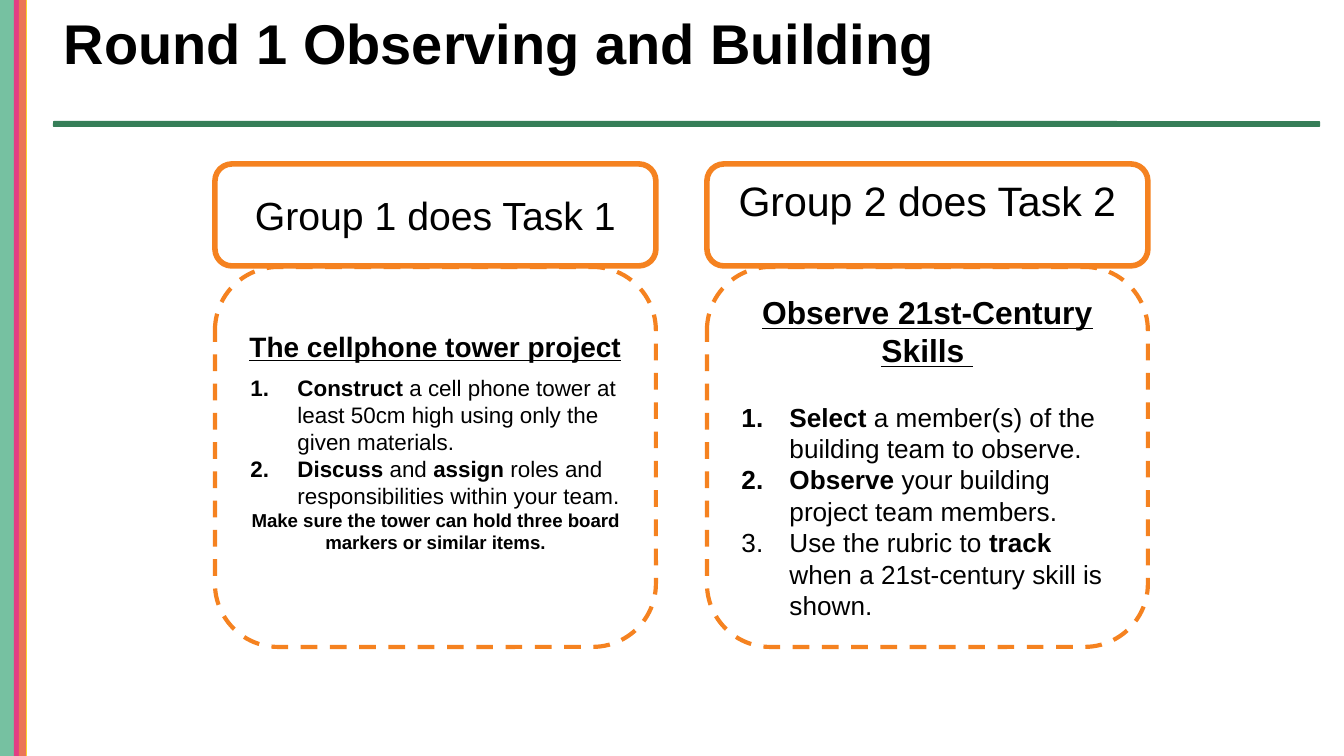
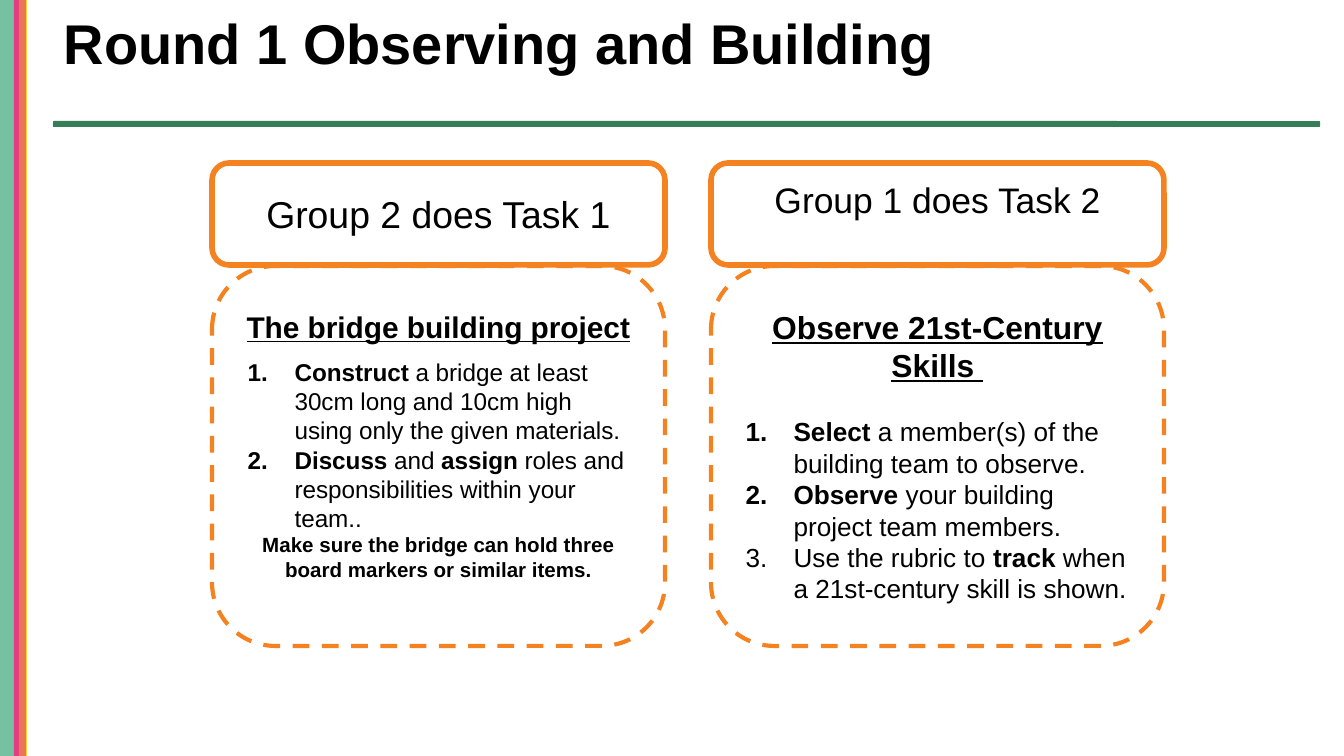
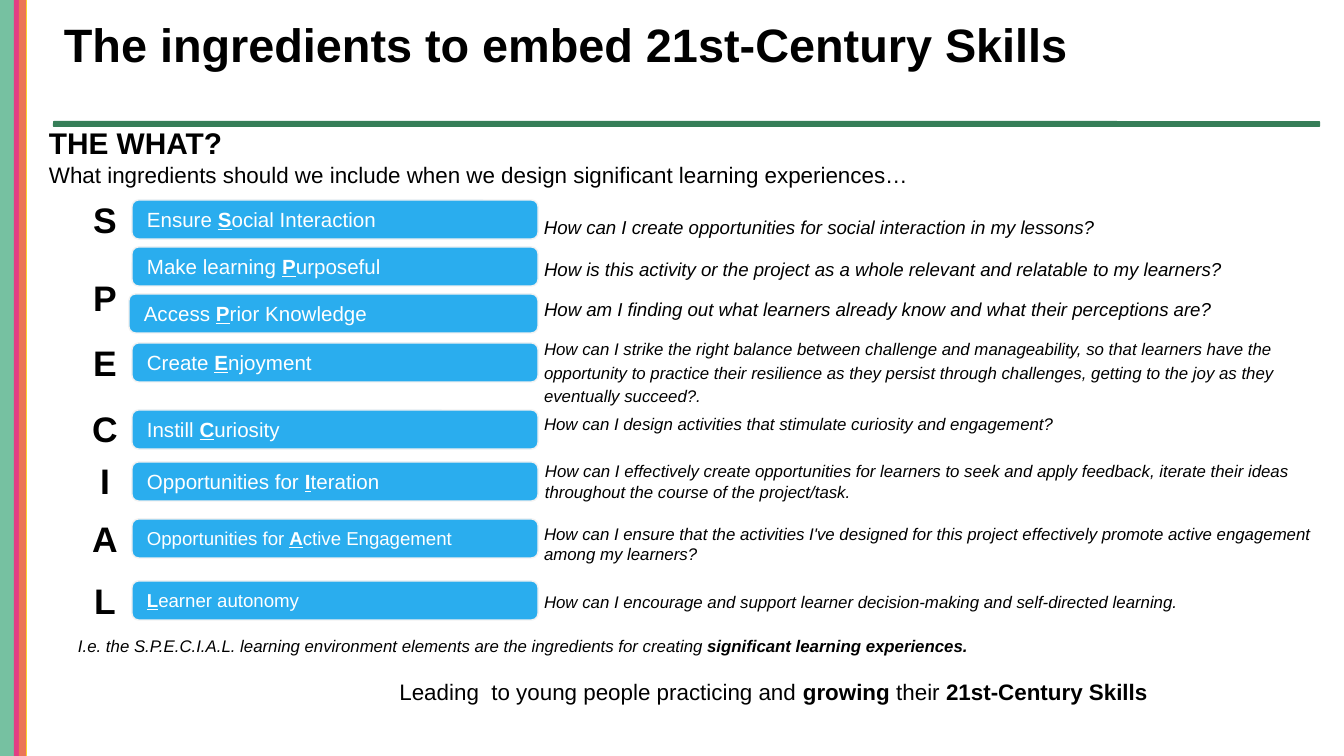
from lxml.etree import SubElement
from pptx import Presentation
from pptx.dml.color import RGBColor
from pptx.enum.dml import MSO_LINE
from pptx.enum.shapes import MSO_SHAPE
from pptx.enum.text import MSO_ANCHOR, PP_ALIGN
from pptx.oxml.ns import qn
from pptx.util import Pt

PX = 914400 / 134.4
WIDE, HIGH = 1344, 756
FONT = "Arial"
BLACK = RGBColor(0x00, 0x00, 0x00)
WHITE = RGBColor(0xFF, 0xFF, 0xFF)
PALE = RGBColor(0xF2, 0xF2, 0xF2)
YELLOW = RGBColor(0xF9, 0xD3, 0x2E)
GREEN = RGBColor(0x36, 0x7E, 0x58)
MINT = RGBColor(0x76, 0xC1, 0xA1)
PINK = RGBColor(0xE2, 0x3E, 0x84)
CORAL = RGBColor(0xEB, 0x75, 0x56)
ORANGE = RGBColor(0xF5, 0x82, 0x20)
BLUE = RGBColor(0x2A, 0xAD, 0xEE)
RECT, ROUND = MSO_SHAPE.RECTANGLE, MSO_SHAPE.ROUNDED_RECTANGLE
LEFT, MID = PP_ALIGN.LEFT, PP_ALIGN.CENTER


def place(slide, form, spot, fill=None, edge=None, thick=0.75, pad=(13, 13, 13, 13)):
    area = [round(n * PX) for n in spot]
    if form is None:
        item = slide.shapes.add_textbox(*area)
    else:
        item = slide.shapes.add_shape(form, *area)
        item.shadow.inherit = False
        if fill is None:
            item.fill.background()
        else:
            item.fill.solid()
            item.fill.fore_color.rgb = fill
        if edge is None:
            item.line.fill.background()
        else:
            item.line.color.rgb = edge
            item.line.width = Pt(thick)
    frame = item.text_frame
    frame.word_wrap = True
    frame.vertical_anchor = MSO_ANCHOR.TOP if form is None else MSO_ANCHOR.MIDDLE
    sides = [round(n * PX) for n in pad]
    frame.margin_left, frame.margin_top, frame.margin_right, frame.margin_bottom = sides
    return item


def write(item, runs, size, tone=BLACK, align=LEFT, after=0, lead=None, hang=0):
    frame = item.text_frame
    para = frame.paragraphs[0]
    if para.runs:
        para = frame.add_paragraph()
    para.alignment = align
    if after:
        para.space_after = Pt(after)
    if lead:
        para.line_spacing = lead
    if hang:
        prop = para._p.get_or_add_pPr()
        prop.set("marL", str(round(51 * PX)))
        prop.set("indent", str(round(-hang * PX)))
        tint = SubElement(prop, qn("a:buClr"))
        SubElement(tint, qn("a:srgbClr")).set("val", str(BLACK))
        SubElement(prop, qn("a:buAutoNum")).set("type", "arabicPeriod")
    for text, style in runs:
        run = para.add_run()
        run.text = text
        font = run.font
        font.name, font.size = FONT, Pt(size)
        font.color.rgb = tone
        font.bold = "b" in style
        font.italic = "i" in style
        font.underline = "u" in style


deck = Presentation()
deck.slide_width, deck.slide_height = round(WIDE * PX), round(HIGH * PX)

bands = [
    (RECT, (20, 0, 7, HIGH), YELLOW),
    (ROUND, (53, 121, 1267, 6), GREEN),
    (RECT, (0, 0, 16, HIGH), MINT),
    (RECT, (14, 0, 5, HIGH), PINK),
    (RECT, (19, 0, 7, HIGH), CORAL),
]
titles = [
    ("Round 1 Observing and Building", 30, 0.9),
    ("Round 1 Observing and Building", 30, 0.9),
    ("The ingredients to embed 21st-Century Skills", 25.1, None),
]
slides = []
for title, size, lead in titles:
    slide = deck.slides.add_slide(deck.slide_layouts[6])
    for form, spot, fill in bands:
        place(slide, form, spot, fill)
    head = place(slide, None, (55, 11, 1271, 91), pad=(9, 5, 9, 5))
    write(head, [(title, "b")], size, lead=lead)
    slides.append(slide)

watch = [
    [("Select", "b"), (" a member(s) of the building team to observe.", "")],
    [("Observe", "b"), (" your building project team members.", "")],
    [("Use the rubric to ", ""), ("track", "b"), (" when a 21st-century skill is shown.", "")],
]
rounds = [
    {
        "left": (215, 707), "top": 164, "wide": 441,
        "heads": [("Group 1 does Task 1", 21), ("Group 2 does Task 2", 22)],
        "name": "The cellphone tower project ", "sizes": (15, 12, 10), "after": 6, "foot": 31,
        "goal": " a cell phone tower at least 50cm high using only the given materials.",
        "end": ".", "thing": "tower",
    },
    {
        "left": (212, 711), "top": 163, "wide": 453,
        "heads": [("Group 2 does Task 1", 20), ("Group 1 does Task 2", 19)],
        "name": "The bridge building project ", "sizes": (16, 13, 11), "after": 7, "foot": 22,
        "goal": " a bridge at least 30cm long and 10cm high using only the given materials.",
        "end": "..", "thing": "bridge",
    },
]
for slide, part in zip(slides, rounds):
    top, wide = part["top"], part["wide"]
    cards = []
    for left, (text, size), low, foot in zip(part["left"], part["heads"], (0, 30), (part["foot"], 0)):
        head = place(slide, ROUND, (left, top, wide, 102), None, ORANGE, 3, (13, 13, 13, 13 + low))
        write(head, [(text, "")], size, align=MID)
        card = place(slide, ROUND, (left, top + 103, wide, 380), None, ORANGE, 2.25,
                     (13, 13, 13, 13 + foot))
        card.line.dash_style = MSO_LINE.DASH
        cards.append(card)
    build, study = cards
    large, plain, small = part["sizes"]
    steps = [
        [("Construct", "b"), (part["goal"], "")],
        [("Discuss", "b"), (" and ", ""), ("assign", "b"),
         (" roles and responsibilities within your team" + part["end"], "")],
    ]
    write(build, [(part["name"], "bu")], large, align=MID, after=part["after"])
    for step in steps:
        write(build, step, plain, hang=47)
    note = f"Make sure the {part['thing']} can hold three board markers or similar items."
    write(build, [(note, "b")], small, align=MID)
    write(study, [("Observe 21st-Century Skills ", "bu")], 17, align=MID, after=17)
    for step in watch:
        write(study, step, 14, hang=48)

slide = slides[2]
goal = place(slide, None, (258, 673, 1031, 38), pad=(9, 5, 9, 5))
write(goal, [("Leading  to young people practicing and ", ""), ("growing", "b"),
             (" their ", ""), ("21st-Century Skills", "b")], 12, align=MID)
intro = place(slide, None, (36, 112, 1255, 90))
write(intro, [("THE WHAT?", "b")], 16)
write(intro, [("What ingredients should we include when we design significant learning experiences…", "")], 12)
close = place(slide, None, (65, 626, 1270, 47))
write(close, [("I.e. the S.P.E.C.I.A.L. learning environment elements are the ingredients for creating ", "i"),
              ("significant learning experiences.", "bi")], 9)

bars = [
    (132, 200, "Ensure ", "S", "ocial Interaction", 11),
    (132, 247, "Make learning ", "P", "urposeful", 11),
    (129, 294, "Access ", "P", "rior Knowledge", 11),
    (132, 343, "Create ", "E", "njoyment", 11),
    (132, 410, "Instill ", "C", "uriosity", 11),
    (132, 462, "Opportunities for ", "I", "teration", 11),
    (132, 519, "Opportunities for ", "A", "ctive Engagement", 10),
    (132, 581, "", "L", "earner autonomy", 10),
]
for left, top, lead, key, rest, size in bars:
    bar = place(slide, ROUND, (left, top, 538 - left, 39), BLUE, PALE)
    runs = [(lead, ""), (key, "bu"), (rest, "")]
    write(bar, [run for run in runs if run[0]], size, WHITE)

for key, top in zip("SPECIAL", (185, 263, 328, 394, 446, 504, 566)):
    mark = place(slide, None, (78, top, 54, 70), pad=(0, 13, 0, 13))
    write(mark, [(key, "b")], 19, align=MID)

asks = [
    (531, 200, 750, 10, 1.15, "How can I create opportunities for social interaction in my lessons?"),
    (531, 242, 813, 10, 1.15,
     "How is this activity or the project as a whole relevant and relatable to my learners?"),
    (531, 282, 804, 10, 1.15,
     "How am I finding out what learners already know and what their perceptions are?"),
    (531, 323, 789, 9, 1.15,
     "How can I strike the right balance between challenge and manageability, so that learners "
     "have the opportunity to practice their resilience as they persist through challenges, "
     "getting to the joy as they eventually succeed?."),
    (531, 404, 789, 9, None, "How can I design activities that stimulate curiosity and engagement?"),
    (532, 448, 801, 9, None,
     "How can I effectively create opportunities for learners to seek and apply feedback, "
     "iterate their ideas throughout the course of the project/task."),
    (531, 511, 813, 9, None,
     "How can I ensure that the activities I've designed for this project effectively promote "
     "active engagement among my learners?"),
    (531, 577, 778, 9, 1.15,
     "How can I encourage and support learner decision-making and self-directed learning."),
]
for left, top, wide, size, lead, text in asks:
    ask = place(slide, None, (left, top, wide, 67))
    write(ask, [(text, "i")], size, lead=lead)

deck.save("out.pptx")
